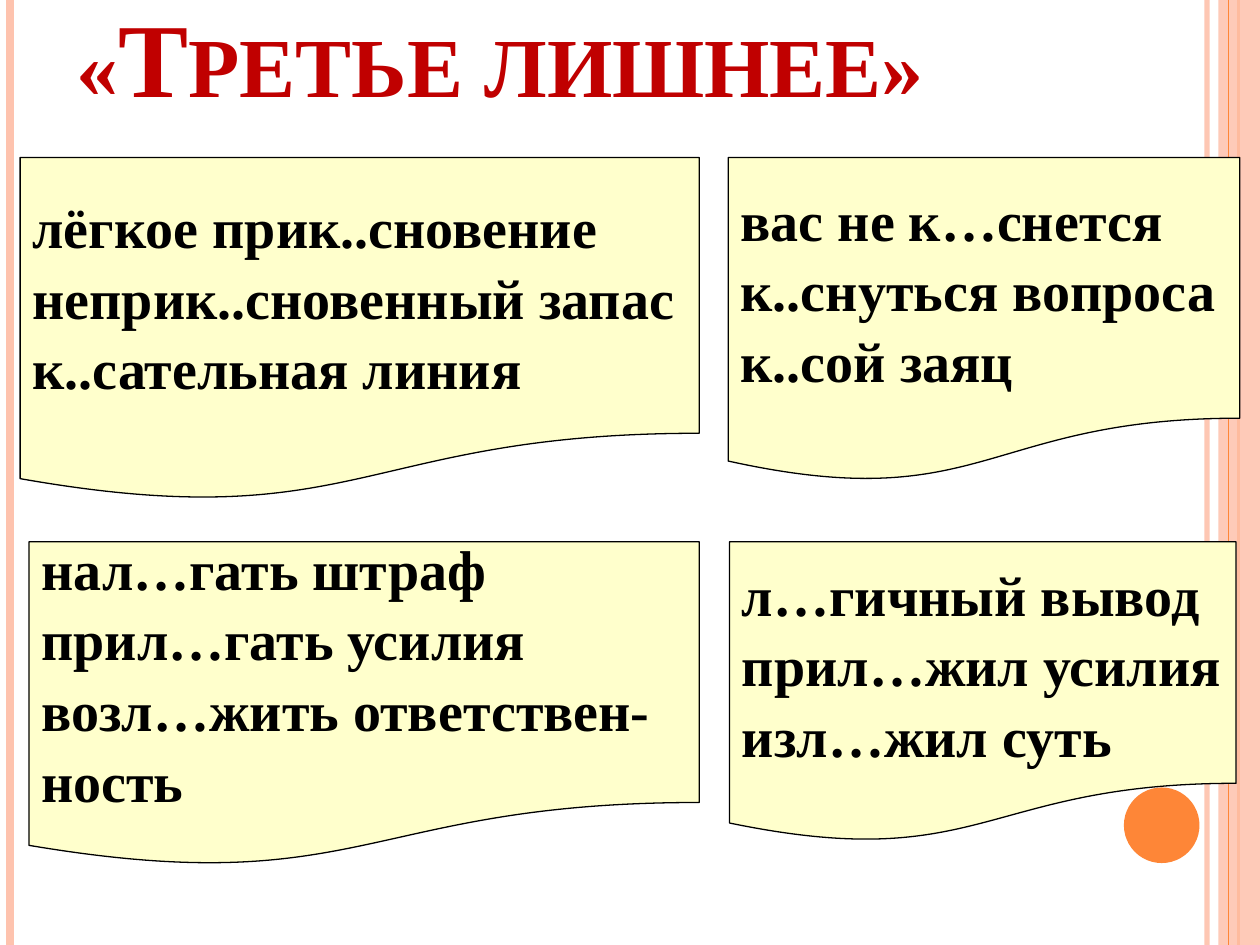
from dataclasses import dataclass

from lxml import etree
from pptx import Presentation
from pptx.dml.color import RGBColor
from pptx.enum import shapes, text
from pptx.oxml.ns import qn
from pptx.util import Inches, Pt

COLORS = {
    "title": "C00000",
    "ink": "000000",
    "paper": "FFFFCC",
    "peach": "FEC3AE",
    "orange": "FE8637",
}
FONT = "Times New Roman"


@dataclass
class Stripe:
    x: float
    color: str
    width: float
    opacity: int = 100


@dataclass
class Card:
    left: float
    top: float
    width: float
    height: float
    lines: tuple[str, ...]


LEFT_STRIPES = (
    Stripe(9.58, "peach", 3, 93),
    Stripe(0.08, "peach", 4.5),
    Stripe(9.83, "orange", 1.5),
)
BAND_STRIPE = Stripe(9.75, "orange", 0.75)

CARDS = (
    Card(0.23, 4.3, 5.32, 2.58,
         ("нал…гать штраф", "прил…гать усилия", "возл…жить ответствен-", "ность")),
    Card(0.16, 1.25, 5.39, 2.73,
         ("лёгкое прик..сновение", "неприк..сновенный запас", "к..сательная линия")),
    Card(5.78, 1.25, 4.06, 2.58,
         ("вас не к…снется", "к..снуться вопроса", "к..сой заяц")),
    Card(5.79, 4.3, 4.02, 2.39,
         ("л…гичный вывод", "прил…жил усилия", "изл…жил суть")),
)


def rgb(name: str) -> RGBColor:
    return RGBColor.from_string(COLORS[name])


def set_opacity(element, percent: int) -> None:
    color = next(element.iter(qn("a:srgbClr")))
    etree.SubElement(color, qn("a:alpha")).set("val", str(percent * 1000))


def style_font(paragraph, size: float, color: str) -> None:
    font = paragraph.font
    font.name, font.size, font.bold = FONT, Pt(size), True
    font.color.rgb = rgb(color)


def add_stripe(slide, stripe: Stripe) -> None:
    x = Inches(stripe.x)
    line = slide.shapes.add_connector(
        shapes.MSO_CONNECTOR.STRAIGHT, x, 0, x, Inches(7.5))
    line.line.color.rgb = rgb(stripe.color)
    line.line.width = Pt(stripe.width)
    properties = line._element.spPr
    if stripe.opacity < 100:
        set_opacity(properties, stripe.opacity)
    etree.SubElement(properties, qn("a:effectLst"))


def add_filled(slide, kind, left: float, top: float, width: float, height: float,
               color: str):
    shape = slide.shapes.add_shape(
        kind, Inches(left), Inches(top), Inches(width), Inches(height))
    shape.shadow.inherit = False
    shape.fill.solid()
    shape.fill.fore_color.rgb = rgb(color)
    shape.line.fill.background()
    return shape


def add_title(slide, wording: str) -> None:
    box = slide.shapes.add_textbox(Inches(0.51), Inches(0.13), Inches(9), Inches(0.86))
    frame = box.text_frame
    frame.word_wrap = True
    frame.vertical_anchor = text.MSO_ANCHOR.BOTTOM
    paragraph = frame.paragraphs[0]
    paragraph.text = wording
    style_font(paragraph, 60, "title")
    paragraph.runs[0].font._element.set("cap", "small")


def add_card(slide, card: Card) -> None:
    shape = add_filled(slide, shapes.MSO_SHAPE.FLOWCHART_DOCUMENT,
                       card.left, card.top, card.width, card.height, "paper")
    shape.line.color.rgb = rgb("ink")
    shape.line.width = Pt(0.75)
    frame = shape.text_frame
    frame.word_wrap = False
    frame.vertical_anchor = text.MSO_ANCHOR.MIDDLE
    frame.text = "\n".join(card.lines)
    for paragraph in frame.paragraphs:
        paragraph.alignment = text.PP_ALIGN.LEFT
        paragraph.line_spacing = 1.05
        style_font(paragraph, 32, "ink")


def main() -> None:
    presentation = Presentation()
    presentation.slide_width, presentation.slide_height = Inches(10), Inches(7.5)
    slide = presentation.slides.add_slide(presentation.slide_layouts[6])

    # Background decoration
    for stripe in LEFT_STRIPES:
        add_stripe(slide, stripe)
    band = add_filled(slide, shapes.MSO_SHAPE.RECTANGLE, 9.67, 0, 0.33, 7.5, "peach")
    set_opacity(band._element.spPr, 87)
    add_stripe(slide, BAND_STRIPE)
    add_filled(slide, shapes.MSO_SHAPE.OVAL, 8.92, 6.25, 0.6, 0.6, "orange")

    # Title and word cards
    add_title(slide, "«Третье лишнее»")
    for card in CARDS:
        add_card(slide, card)

    presentation.save("out.pptx")


if __name__ == "__main__":
    main()
